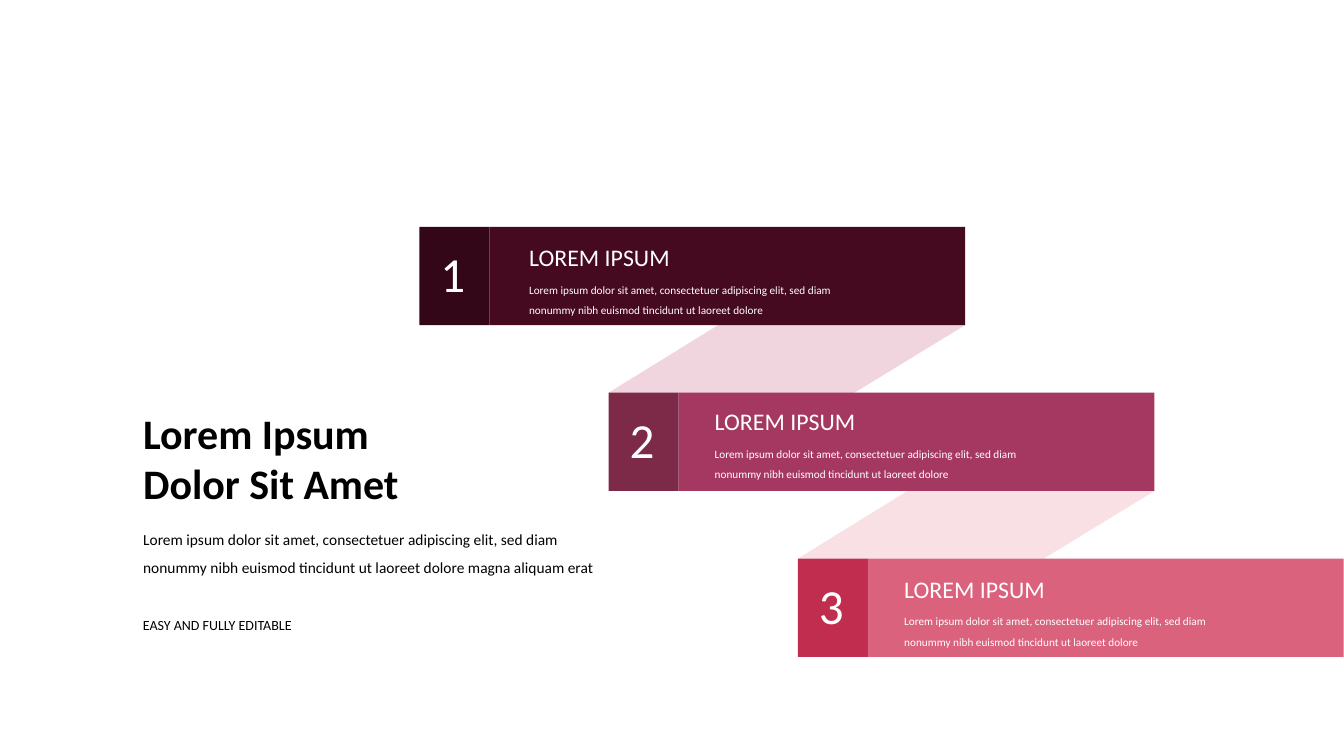
from lxml import etree
from pptx import Presentation
from pptx.dml.color import RGBColor
from pptx.enum.shapes import MSO_SHAPE
from pptx.enum.text import MSO_ANCHOR, MSO_AUTO_SIZE, PP_ALIGN
from pptx.oxml.ns import qn
from pptx.util import Inches, Pt

RECT = MSO_SHAPE.RECTANGLE
TOP, MIDDLE = MSO_ANCHOR.TOP, MSO_ANCHOR.MIDDLE
LEFT = PP_ALIGN.LEFT
FIXED = MSO_AUTO_SIZE.NONE

THEME = {
    "font": "Calibri",
    "dark": "000000",
    "light": "FFFFFF",
    "badges": ["340718", "7C2A48", "C02D4E"],
    "panels": ["450920", "A53860", "DA627D"],
    "ribbons": ["F0D4DE", "F8E0E5"],
    "title": {"size": Pt(30), "bold": True},
    "body": {"size": Pt(11), "bold": False},
    "tag": {"size": Pt(10), "bold": False},
    "number": {"size": Pt(35), "bold": False},
    "head": {"size": Pt(17), "bold": False},
    "blurb": {"size": Pt(8), "bold": False},
}

deck = Presentation()
deck.slide_width, deck.slide_height = Inches(13.33), Inches(7.5)
COL, ROW = deck.slide_width / 100, deck.slide_height / 100
slide = deck.slides.add_slide(deck.slide_layouts[1])
shapes = slide.shapes


def paint(shape, color):
    shape.shadow.inherit = False
    shape.fill.solid()
    shape.fill.fore_color.rgb = RGBColor.from_string(color)
    shape.line.fill.background()


def write(text, style, color, place, box=None, wrap=True, anchor=TOP, space=1.0, inset=None):
    left, top, width, height = place
    box = box or shapes.add_textbox(0, 0, 0, 0)
    spot = {"left": left * COL, "top": top * ROW, "width": width * COL, "height": height * ROW}
    for key, value in spot.items():
        setattr(box, key, round(value))
    frame = box.text_frame
    frame.text = text
    layout = {"word_wrap": wrap, "auto_size": FIXED, "vertical_anchor": anchor}
    if inset is not None:
        for side in ("left", "top", "right", "bottom"):
            layout[f"margin_{side}"] = inset
    for key, value in layout.items():
        setattr(frame, key, value)
    for line in frame.paragraphs:
        rules = {"alignment": LEFT, "line_spacing": space, "space_before": Pt(0)}
        for key, value in rules.items():
            setattr(line, key, value)
        for run in line.runs:
            for key, value in {"name": THEME["font"], **THEME[style]}.items():
                setattr(run.font, key, value)
            run.font.color.rgb = RGBColor.from_string(color)
    return box


HEAD = "LOREM IPSUM"
BLURB = ("Lorem ipsum dolor sit amet, consectetuer adipiscing elit, sed diam "
         "nonummy nibh euismod tincidunt ut laoreet dolore")
FIRST_X, STEP_X = 31.2, 14.08
FIRST_Y, STEP_Y = 30, 21.95
BADGE, PANEL, TALL = 5.22, 35.4, 13
RIBBON, SLANT = 18.38, 8.25
TEXTS = [(38.63, 31.47), (52.44, 53.2), (66.54, 75.33)]

for index, color in enumerate(THEME["ribbons"]):
    x, y = FIRST_X + index * STEP_X, FIRST_Y + index * STEP_Y
    end, base = x + BADGE + PANEL, y + TALL
    below = y + STEP_Y
    points = [(end - RIBBON, base), (end, base), (end - SLANT, below), (x + STEP_X, below)]
    points = [(round(a * COL), round(b * ROW)) for a, b in points]
    path = shapes.build_freeform(*points[0])
    path.add_line_segments(points[1:], close=True)
    paint(path.convert_to_shape(), color)

for index, (text_x, text_y) in enumerate(TEXTS):
    x, y = FIRST_X + index * STEP_X, FIRST_Y + index * STEP_Y
    for left, width, part in ((x, BADGE, "badges"), (x + BADGE, PANEL, "panels")):
        bar = shapes.add_shape(RECT, round(left * COL), round(y * ROW),
                               round(width * COL), round(TALL * ROW))
        paint(bar, THEME[part][index])
    write(str(index + 1), "number", THEME["light"], (x + 1.35, y + 2.67, 2.32, 7.87),
          wrap=False, anchor=MIDDLE, space=0.9, inset=Inches(0.03))
    write(HEAD, "head", THEME["light"], (text_x, text_y, 14.1, 5.2))
    write(BLURB, "blurb", THEME["light"], (text_x, text_y + 4.45, 26.85, 6.4), space=1.5)

MARGIN = 9.9
write("Lorem Ipsum\nDolor Sit Amet", "title", THEME["dark"], (MARGIN, 53.2, 20.7, 14.8),
      box=shapes.title, wrap=False)
body = write(BLURB + " magna aliquam erat", "body", THEME["dark"], (MARGIN, 68.27, 35.33, 8.4),
             box=slide.placeholders[1], space=1.5)
for line in body.text_frame.paragraphs:
    props = line._p.get_or_add_pPr()
    for key in ("marL", "indent"):
        props.set(key, "0")
    etree.SubElement(props, qn("a:buNone"))
write("EASY AND FULLY EDITABLE", "tag", THEME["dark"], (MARGIN, 80.93, 12.9, 3.6), wrap=False)

deck.save("out.pptx")
